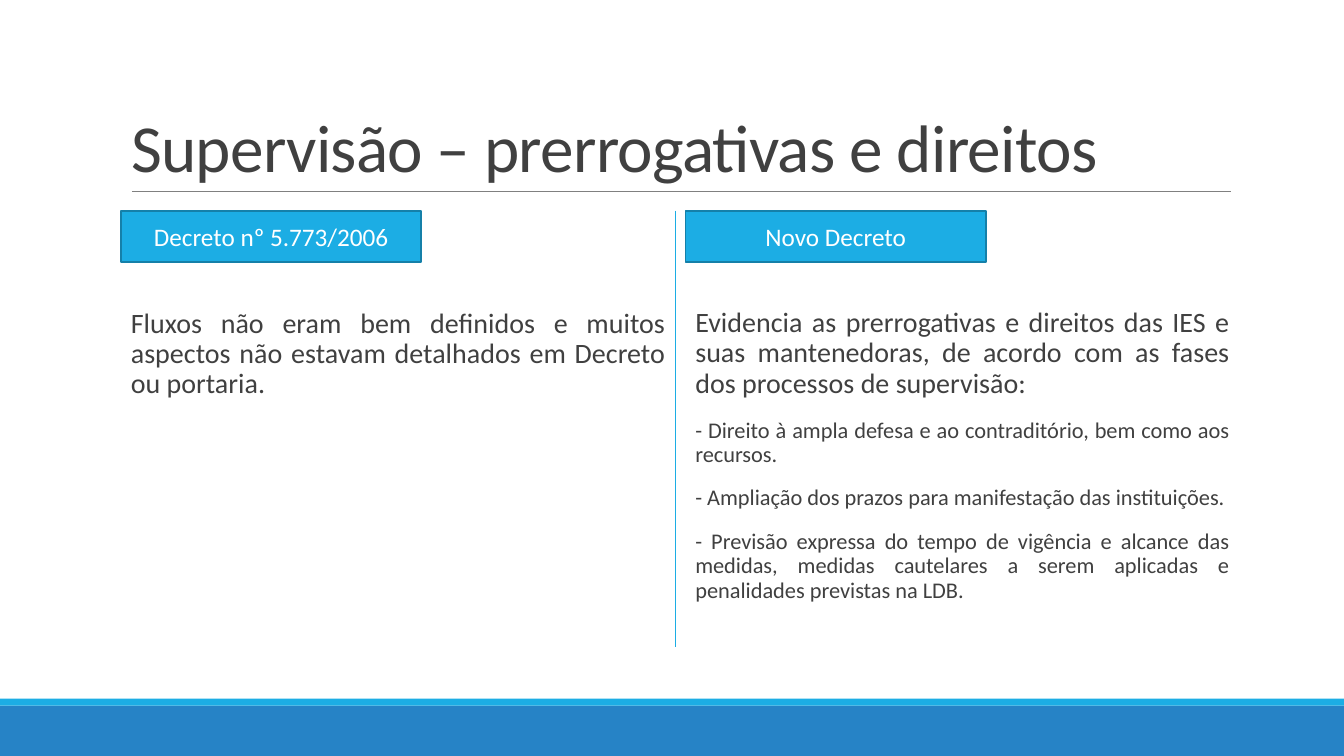
import pptx
import pptx.util
import pptx.dml.color
import pptx.enum.shapes
import pptx.enum.text
import pptx.oxml.ns
import lxml.etree

Pt = pptx.util.Pt
RGBColor = pptx.dml.color.RGBColor
ALIGN = pptx.enum.text.PP_ALIGN
ANCHOR = pptx.enum.text.MSO_ANCHOR

WHITE = RGBColor(0xFF, 0xFF, 0xFF)
TEXT = RGBColor(0x40, 0x40, 0x40)
GRAY = RGBColor(0x80, 0x80, 0x80)
CYAN = RGBColor(0x1C, 0xAD, 0xE4)
BLUE = RGBColor(0x26, 0x83, 0xC6)
OUTLINE = RGBColor(0x15, 0x80, 0xA9)

COLUMN_WIDTH = 388.8
LABEL_TOP = 150.5
COLUMN_BOTTOM = 462.2

COLUMNS = [
    (86.4, 217.4, "Decreto nº 5.773/2006", [
        ("Fluxos não eram bem definidos e muitos aspectos não estavam "
         "detalhados em Decreto ou portaria.", 20),
    ]),
    (489.6, 216.7, "Novo Decreto", [
        ("Evidencia as prerrogativas e direitos das IES e suas mantenedoras, "
         "de acordo com as fases dos processos de supervisão:", 20),
        ("- Direito à ampla defesa e ao contraditório, bem como aos recursos.", 16),
        ("- Ampliação dos prazos para manifestação das instituições.", 16),
        ("- Previsão expressa do tempo de vigência e alcance das medidas, "
         "medidas cautelares a serem aplicadas e penalidades previstas na LDB.", 16),
    ]),
]

presentation = pptx.Presentation()
presentation.slide_width = Pt(960)
presentation.slide_height = Pt(540)
slide = presentation.slides.add_slide(presentation.slide_layouts[5])


def add_rectangle(left, top, width, height, fill):
    shape = slide.shapes.add_shape(
        pptx.enum.shapes.MSO_SHAPE.RECTANGLE,
        Pt(left), Pt(top), Pt(width), Pt(height))
    shape.shadow.inherit = False
    shape.fill.solid()
    shape.fill.fore_color.rgb = fill
    shape.line.fill.background()
    return shape


def write_paragraph(paragraph, text, size, color, alignment, **formats):
    """Fill a paragraph; formats holds further paragraph attributes."""
    run = paragraph.add_run()
    run.text = text
    for name, value in {"name": "Calibri", "size": Pt(size)}.items():
        setattr(run.font, name, value)
    run.font.color.rgb = color
    for name, value in {"alignment": alignment, **formats}.items():
        setattr(paragraph, name, value)
    return run


# Footer bands
add_rectangle(0, 504, 960, 36, BLUE)
add_rectangle(0, 499, 960, 5, CYAN)

# Title
title = slide.shapes.title
title_box = {"left": 86.4, "top": 22.3, "width": 792, "height": 114.4}
for name, value in title_box.items():
    setattr(title, name, Pt(value))
title.text_frame.auto_size = pptx.enum.text.MSO_AUTO_SIZE.NONE
title.text_frame.vertical_anchor = ANCHOR.BOTTOM
title_run = write_paragraph(
    title.text_frame.paragraphs[0], "Supervisão – prerrogativas e direitos",
    48, TEXT, ALIGN.LEFT, line_spacing=0.85)
title_run.font._element.set("spc", "-50")

# Title rule and column divider
for start_x, start_y, end_x, end_y, color, width in [
        (94.3, 136.8, 879.1, 136.8, GRAY, 0.5),
        (482.4, LABEL_TOP, 482.4, COLUMN_BOTTOM, CYAN, 1)]:
    connector = slide.shapes.add_connector(
        pptx.enum.shapes.MSO_CONNECTOR.STRAIGHT,
        Pt(start_x), Pt(start_y), Pt(end_x), Pt(end_y))
    connector.line.color.rgb = color
    connector.line.width = Pt(width)
    lxml.etree.SubElement(
        connector._element.spPr, pptx.oxml.ns.qn("a:effectLst"))

# Columns
for left, body_top, heading, passages in COLUMNS:
    body = slide.shapes.add_textbox(
        Pt(left), Pt(body_top), Pt(COLUMN_WIDTH), Pt(COLUMN_BOTTOM - body_top))
    frame = body.text_frame
    frame.word_wrap = True
    frame.margin_left = Pt(7.2)
    frame.margin_right = 0
    for index, (text, size) in enumerate(passages):
        paragraph = frame.add_paragraph() if index else frame.paragraphs[0]
        write_paragraph(
            paragraph, text, size, TEXT, ALIGN.JUSTIFY, line_spacing=0.9,
            space_before=Pt(12 if index else 0), space_after=Pt(2))

    label = add_rectangle(left, LABEL_TOP, 214.6, 36.7, CYAN)
    label.line.color.rgb = OUTLINE
    label.line.width = Pt(1.25)
    label.text_frame.vertical_anchor = ANCHOR.MIDDLE
    write_paragraph(
        label.text_frame.paragraphs[0], heading, 18, WHITE, ALIGN.CENTER)

presentation.save("out.pptx")
